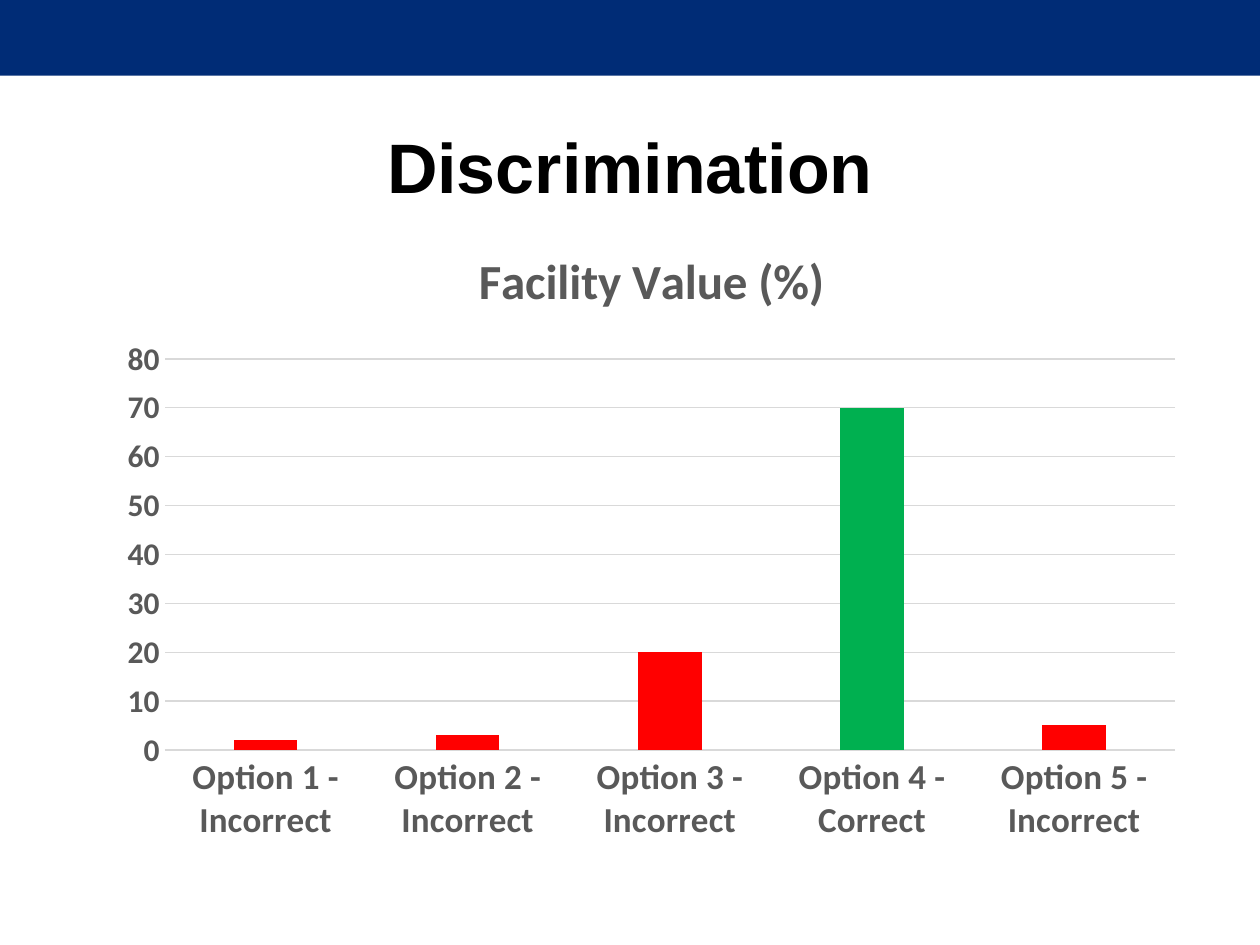
"""Build the Discrimination slide with its facility value column chart."""
from pptx import Presentation, util as u
from pptx.chart.data import CategoryChartData
from pptx.dml.color import RGBColor
from pptx.enum import chart as ch, shapes, text

NAVY = RGBColor(0x00, 0x2C, 0x76)
BLACK = RGBColor(0x00, 0x00, 0x00)
GRAY = RGBColor(0x59, 0x59, 0x59)
GRID = RGBColor(0xD9, 0xD9, 0xD9)
RED = RGBColor(0xFF, 0x00, 0x00)
GREEN = RGBColor(0x00, 0xB0, 0x50)


def style(font, name, size, color):
    values = {"name": name, "size": u.Pt(size), "bold": True}
    for key, value in values.items():
        setattr(font, key, value)
    font.color.rgb = color


prs = Presentation()
prs.slide_width, prs.slide_height = u.Inches(10), u.Inches(7.5)
W, H = prs.slide_width, prs.slide_height
s = prs.slides.add_slide(prs.slide_layouts[6])

sp = s.shapes.add_shape(shapes.MSO_SHAPE.RECTANGLE, 0, 0, W, int(H * 0.08))
sp.shadow.inherit = False
sp.fill.solid()
sp.fill.fore_color.rgb = NAVY
sp.line.fill.background()

sp = s.shapes.add_textbox(int(W * 0.05), u.Inches(0.69), int(W * 0.9), int(H / 6))
tf = sp.text_frame
tf.word_wrap = True
tf.vertical_anchor = text.MSO_ANCHOR.MIDDLE
p = tf.paragraphs[0]
p.alignment = text.PP_ALIGN.CENTER
r = p.add_run()
r.text = "Discrimination"
style(r.font, "Arial", 40, BLACK)

scores = [2, 3, 20, 70, 5]
correct = 3
data = CategoryChartData()
data.categories = [
    f"Option {i + 1} - {'Correct' if i == correct else 'Incorrect'}"
    for i in range(len(scores))
]
data.add_series("Series 1", scores)
chart = s.shapes.add_chart(
    ch.XL_CHART_TYPE.COLUMN_CLUSTERED,
    u.Inches(0.84), u.Inches(1.74), u.Inches(8.66), u.Inches(5.04), data,
).chart
chart.has_legend = False
chart.font.name, chart.font.size = "Calibri", u.Pt(10)

chart.has_title = True
p = chart.chart_title.text_frame.paragraphs[0]
r = p.add_run()
r.text = "Facility Value (%)"
style(r.font, "Calibri", 28, GRAY)
chart.chart_title.include_in_layout = False

plot = chart.plots[0]
for key, value in {"gap_width": 219, "overlap": -27, "vary_by_categories": False}.items():
    setattr(plot, key, value)
series = plot.series[0]
series.invert_if_negative = False
for fill, color in ((series.format.fill, RED), (series.points[correct].format.fill, GREEN)):
    fill.solid()
    fill.fore_color.rgb = color

for axis, size in ((chart.category_axis, 20), (chart.value_axis, 18)):
    axis.major_tick_mark = axis.minor_tick_mark = ch.XL_TICK_MARK.NONE
    style(axis.tick_labels.font, "Calibri", size, GRAY)
chart.value_axis.has_major_gridlines = True
chart.value_axis.format.line.fill.background()
for line in (chart.category_axis.format.line, chart.value_axis.major_gridlines.format.line):
    line.color.rgb = GRID
    line.width = u.Pt(0.75)

prs.save("out.pptx")
